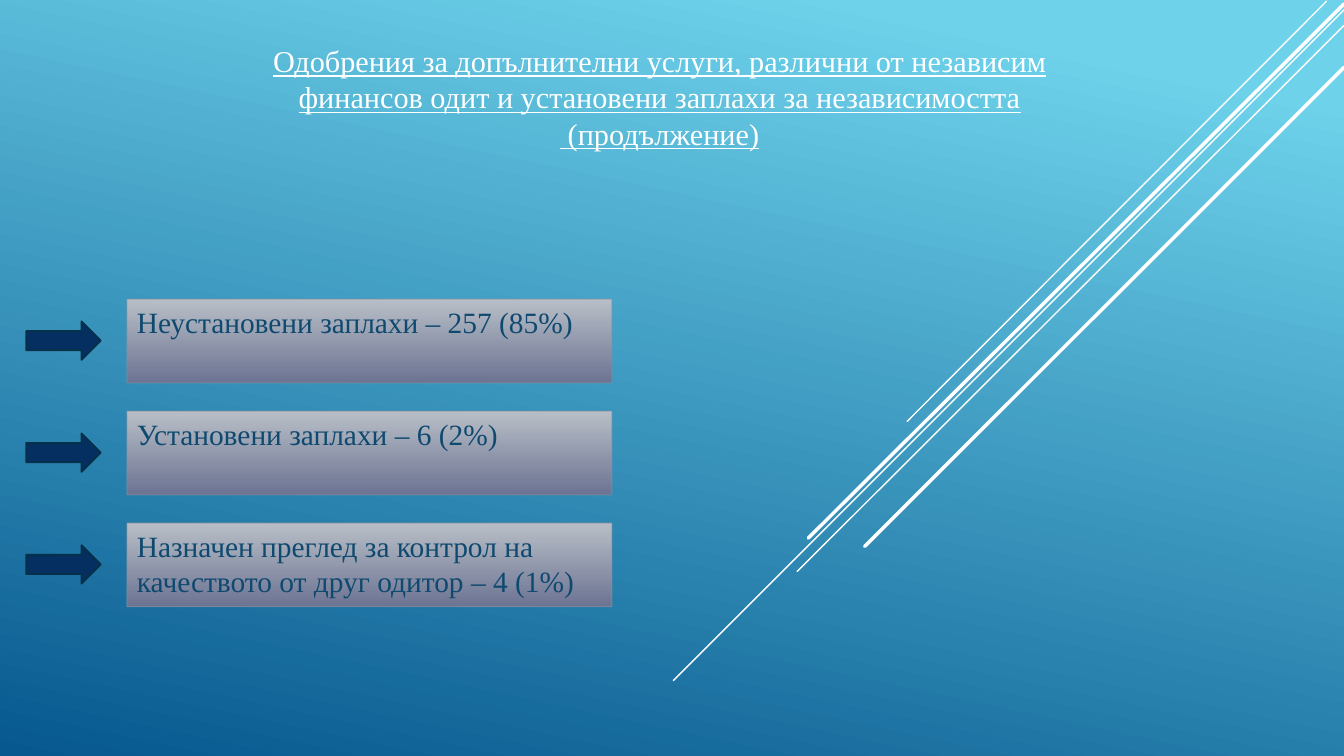
from lxml.etree import SubElement
from pptx import Presentation
from pptx.dml.color import RGBColor
from pptx.enum.shapes import MSO_CONNECTOR, MSO_SHAPE
from pptx.enum.text import MSO_ANCHOR, MSO_AUTO_SIZE, PP_ALIGN
from pptx.oxml.ns import qn
from pptx.util import Cm, Pt

WHITE = RGBColor(0xFF, 0xFF, 0xFF)
SKY = RGBColor(0x6E, 0xD2, 0xEB)
OCEAN = RGBColor(0x06, 0x58, 0x8E)
BOX_TOP = RGBColor(0xB8, 0xBE, 0xC6)
BOX_BOTTOM = RGBColor(0x6C, 0x74, 0x93)
BOX_LINE = RGBColor(0x89, 0x91, 0x9C)
BOX_TEXT = RGBColor(0x0F, 0x49, 0x6F)
ARROW_FILL = RGBColor(0x05, 0x2F, 0x61)
ARROW_LINE = RGBColor(0x04, 0x31, 0x48)
FONT = "Times New Roman"


def set_gradient(fill, first, last, start, angle):
    fill.gradient()
    fill.gradient_angle = angle
    for stop, color, position in zip(fill.gradient_stops, (first, last), (start, 1)):
        stop.color.rgb = color
        stop.position = position


def set_font(paragraph, size, color):
    paragraph.font.name = FONT
    paragraph.font.size = Pt(size)
    paragraph.font.color.rgb = color


presentation = Presentation()
presentation.slide_width = Cm(33.87)
presentation.slide_height = Cm(19.05)
slide = presentation.slides.add_slide(presentation.slide_layouts[5])
set_gradient(slide.background.fill, SKY, OCEAN, 0.1, 258)

diagonals = [
    (33.43, 0.03, 22.86, 10.62, 1),
    (33.87, 0.25, 16.97, 17.15, 1),
    (33.87, 0.64, 20.09, 14.4, 1),
    (33.87, 0.1, 20.37, 13.56, 2.5),
    (33.87, 1.7, 21.79, 13.77, 2.5),
]
for start_x, start_y, end_x, end_y, width in diagonals:
    diagonal = slide.shapes.add_connector(
        MSO_CONNECTOR.STRAIGHT, Cm(start_x), Cm(start_y), Cm(end_x), Cm(end_y)
    )
    diagonal.line.color.rgb = WHITE
    diagonal.line.width = Pt(width)
    diagonal.get_or_add_ln().set("cap", "rnd")
    SubElement(diagonal._element.spPr, qn("a:effectLst"))

title = slide.shapes.title
title.left, title.top, title.width, title.height = Cm(5.51), Cm(1.02), Cm(22.23), Cm(2.92)
title.text_frame.text = (
    "Одобрения за допълнителни услуги, различни от независим финансов одит "
    "и установени заплахи за независимостта\v (продължение)"
)
title.text_frame.vertical_anchor = MSO_ANCHOR.BOTTOM
title.text_frame.auto_size = MSO_AUTO_SIZE.NONE
title.text_frame.word_wrap = True
heading = title.text_frame.paragraphs[0]
heading.alignment = PP_ALIGN.CENTER
heading.font.underline = True
set_font(heading, 21.6, WHITE)

findings = [
    "Неустановени заплахи – 257 (85%)",
    "Установени заплахи – 6 (2%)",
    "Назначен преглед за контрол на качеството от друг одитор – 4 (1%)",
]
for index, finding in enumerate(findings):
    top = 7.54 + index * 2.82
    box = slide.shapes.add_shape(
        MSO_SHAPE.RECTANGLE, Cm(3.2), Cm(top), Cm(12.22), Cm(2.11)
    )
    box.shadow.inherit = False
    set_gradient(box.fill, BOX_TOP, BOX_BOTTOM, 0, 270)
    box.line.color.rgb = BOX_LINE
    box.line.width = Pt(0.75)
    line_color = box.line._ln.find(".//" + qn("a:srgbClr"))
    SubElement(line_color, qn("a:alpha"), val="60000")
    box.text_frame.text = finding
    box.text_frame.word_wrap = True
    box.text_frame.vertical_anchor = MSO_ANCHOR.TOP
    paragraph = box.text_frame.paragraphs[0]
    paragraph.alignment = PP_ALIGN.LEFT
    paragraph.space_before = Pt(4.2)
    paragraph.space_after = Pt(6)
    set_font(paragraph, 21, BOX_TEXT)

    arrow = slide.shapes.add_shape(
        MSO_SHAPE.RIGHT_ARROW, Cm(0.66), Cm(top + 0.56), Cm(1.88), Cm(0.97)
    )
    arrow.shadow.inherit = False
    arrow.fill.solid()
    arrow.fill.fore_color.rgb = ARROW_FILL
    arrow.line.color.rgb = ARROW_LINE
    arrow.line.width = Pt(1.25)

presentation.save("out.pptx")
